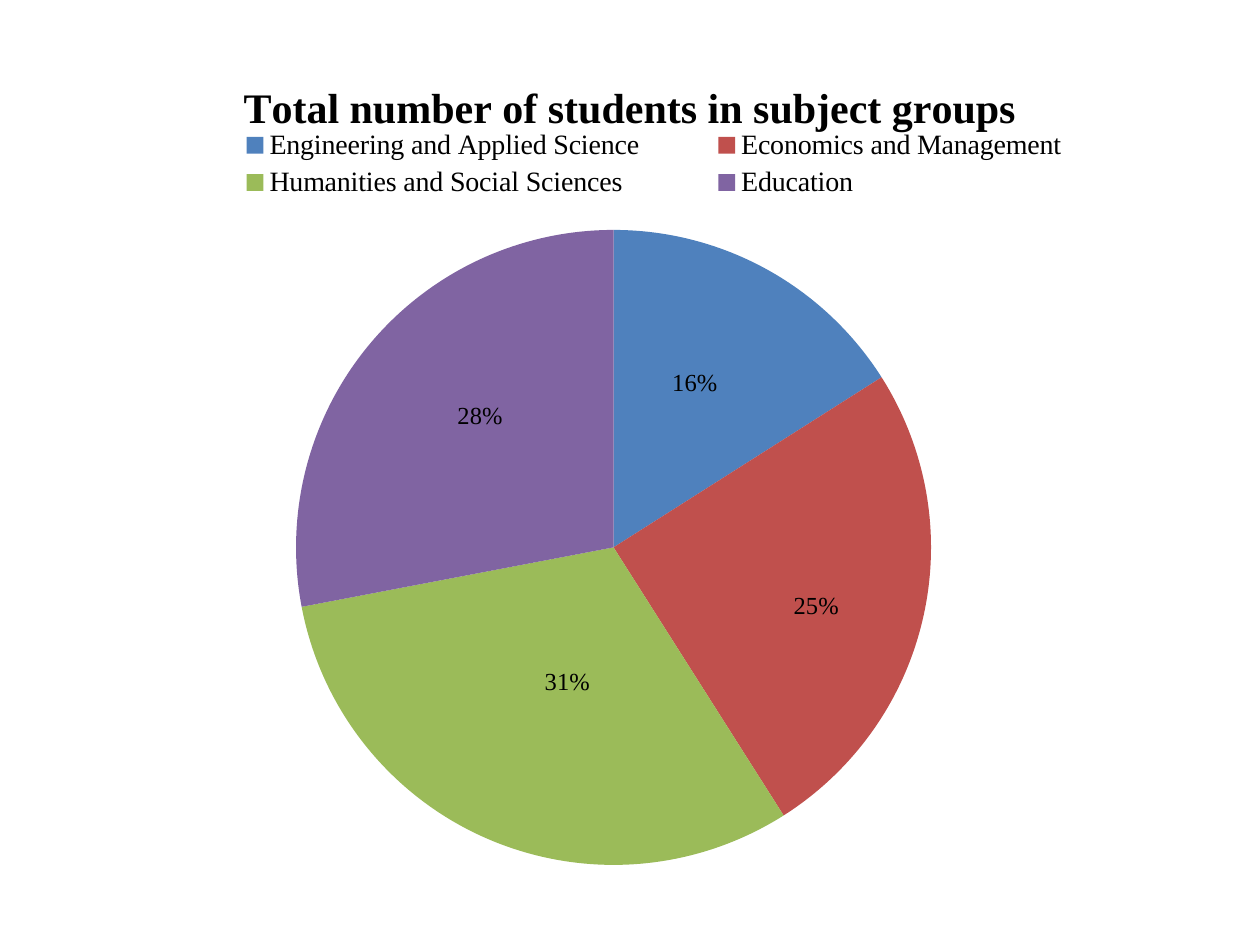
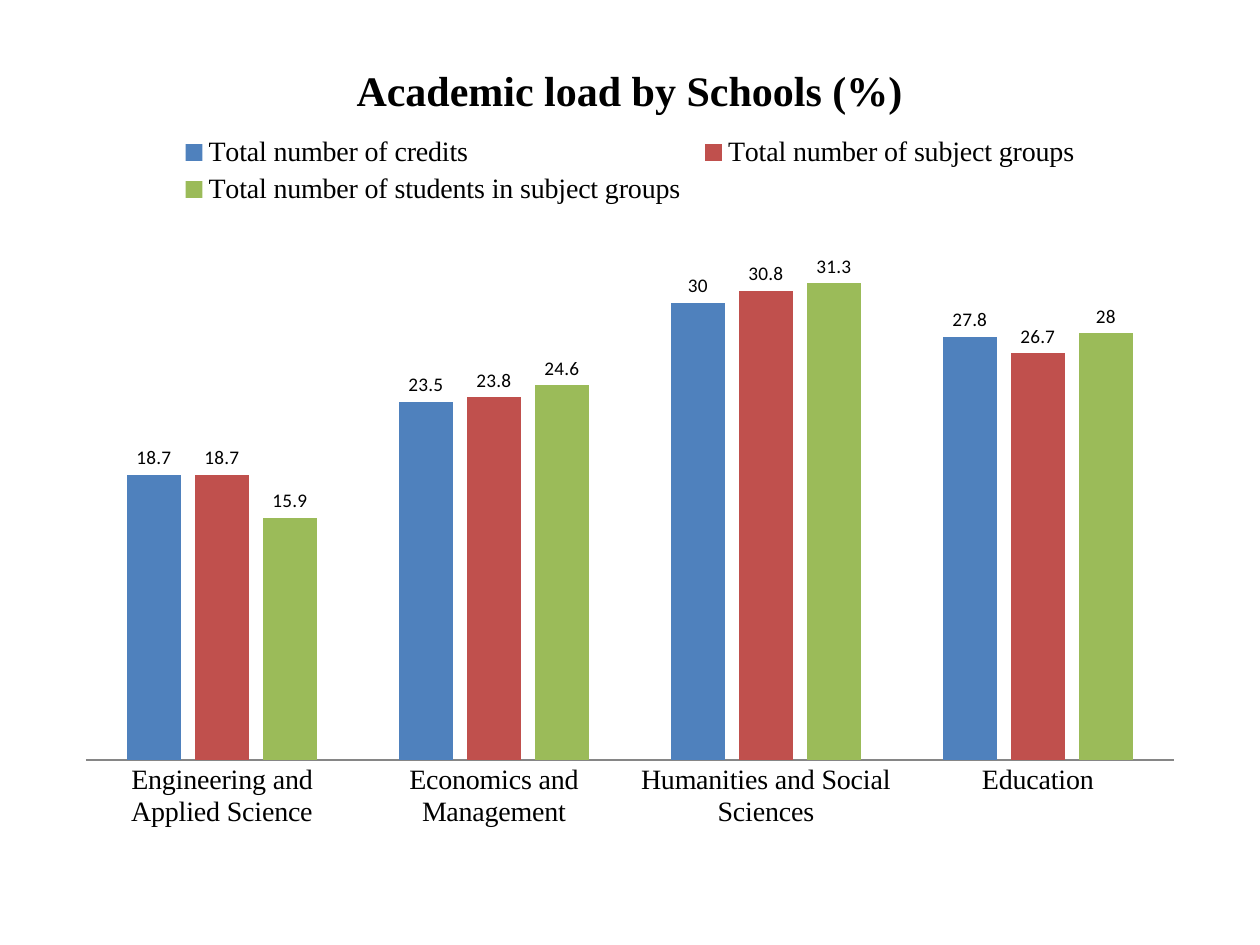
from lxml.etree import SubElement
from pptx import Presentation
from pptx.chart.data import CategoryChartData
from pptx.dml.color import RGBColor
from pptx.enum.chart import (
    XL_CHART_TYPE, XL_LABEL_POSITION, XL_LEGEND_POSITION, XL_TICK_MARK)
from pptx.oxml import parse_xml
from pptx.oxml.ns import nsdecls, qn
from pptx.util import Emu, Pt

SCALE = 914400 / 126
SERIF, SANS = "Times New Roman", "Calibri"
COLORS = {
    "text": "000000", "axis": "868686",
    "blue": "4F81BD", "red": "C0504D", "green": "9BBB59", "violet": "8064A2",
}
FILLS = ("blue", "red", "green", "violet")
SCHOOLS = ("Engineering and Applied Science", "Economics and Management",
           "Humanities and Social Sciences", "Education")
STUDENTS = "Total number of students in subject groups"
SHARES = {STUDENTS: (16, 25, 31, 28)}
LOADS = {
    "Total number of credits": (18.7, 23.5, 30, 27.8),
    "Total number of subject groups": (18.7, 23.8, 30.8, 26.7),
    STUDENTS: (15.9, 24.6, 31.3, 28),
}
# Distance of each pie label from the middle of its slice
NUDGES = ((5, -25), (48, 24), (17, -11), (-11, -30))


def px(num):
    return Emu(round(num * SCALE))


def rgb(name):
    return RGBColor.from_string(COLORS[name])


def style(font, size, face=SERIF, bold=False, color="text"):
    font.size, font.name, font.bold = Pt(size), face, bold
    font.color.rgb = rgb(color)


def write(frame, text, **form):
    frame.text = text
    style(frame.paragraphs[0].runs[0].font, **form)


def paint(part, name):
    part.format.fill.solid()
    part.format.fill.fore_color.rgb = rgb(name)


def place(node, prior, size, spot, inner=False):
    """Give a chart part a manual layout, after its child named prior.

    spot is x, y or x, y, w, h in px; size is that of the chart.
    """
    for old in node.findall(qn("c:layout")):
        node.remove(old)
    layout = parse_xml(f"<c:layout {nsdecls('c')}><c:manualLayout/></c:layout>")
    rules = [("layoutTarget", "inner")] if inner else []
    if prior != "c:idx":
        rules += [("xMode", "edge"), ("yMode", "edge")]
    rules += [(key, f"{val / full:.4f}")
              for key, val, full in zip("xywh", spot, size * 2)]
    for key, val in rules:
        SubElement(layout[0], qn("c:" + key)).set("val", val)
    if prior:
        node.find(qn(prior)).addnext(layout)
    else:
        node.insert(0, layout)


def add_chart(deck, kind, table, box, title, spots):
    """Add a slide with one chart; spots place title, legend and plot."""
    data = CategoryChartData()
    data.categories = SCHOOLS
    for name, vals in table.items():
        data.add_series(name, vals)
    slide = deck.slides.add_slide(deck.slide_layouts[6])
    chart = slide.shapes.add_chart(kind, *map(px, box), data).chart
    style(chart.font, 10, SANS)
    chart.has_title = chart.has_legend = True
    write(chart.chart_title.text_frame, title, size=24, bold=True)
    chart.legend.position = XL_LEGEND_POSITION.TOP
    chart.legend.include_in_layout = False
    style(chart.legend.font, 16)

    size = box[2:]
    root = chart.element
    for tag, prior, spot in zip(("title", "legend", "plotArea"),
                                ("c:tx", "c:legendPos", None), spots):
        node = root.xpath(f"c:chart/c:{tag}")[0]
        place(node, prior, size, spot, inner=tag == "plotArea")
    return chart


def add_pie(deck):
    box = (63, 49, 1134, 857)
    chart = add_chart(deck, XL_CHART_TYPE.PIE, SHARES, box, STUDENTS,
                      ((173, 24), (114, 75, 954, 80), (233, 181, 635, 635)))
    chart.plots[0].vary_by_categories = True
    series = chart.plots[0].series[0]
    for num, (fill, nudge) in enumerate(zip(FILLS, NUDGES)):
        point = series.points[num]
        paint(point, fill)
        style(point.data_label.font, 14)
        point.data_label.position = XL_LABEL_POSITION.CENTER
        node = chart.element.xpath(f".//c:dLbl[c:idx/@val='{num}']")[0]
        node.find(qn("c:showVal")).set("val", "0")
        node.find(qn("c:showPercent")).set("val", "1")
        place(node, "c:idx", box[2:], nudge)
    labels = series.data_labels
    labels.show_value, labels.show_percentage = False, True
    style(labels.font, 14)


def add_columns(deck):
    chart = add_chart(deck, XL_CHART_TYPE.COLUMN_CLUSTERED, LOADS,
                      (63, 39, 1134, 805), "Academic load by Schools (%)",
                      ((286, 17), (107, 92, 920, 80), (23, 188, 1088, 533)))
    plot = chart.plots[0]
    plot.vary_by_categories = False
    plot.gap_width, plot.overlap = 150, -25
    for series, fill in zip(plot.series, FILLS):
        paint(series, fill)
        labels = series.data_labels
        labels.show_value = True
        labels.position = XL_LABEL_POSITION.OUTSIDE_END
        style(labels.font, 11, SANS)
    axis = chart.category_axis
    axis.major_tick_mark = XL_TICK_MARK.NONE
    axis.format.line.color.rgb = rgb("axis")
    axis.format.line.width = Pt(1)
    style(axis.tick_labels.font, 16)
    scale = chart.value_axis
    scale.visible = scale.has_major_gridlines = False
    scale.minimum_scale, scale.maximum_scale = 0, 35


def main():
    deck = Presentation()
    deck.slide_width, deck.slide_height = px(1260), px(945)
    add_pie(deck)
    add_columns(deck)
    deck.save("out.pptx")


if __name__ == "__main__":
    main()
